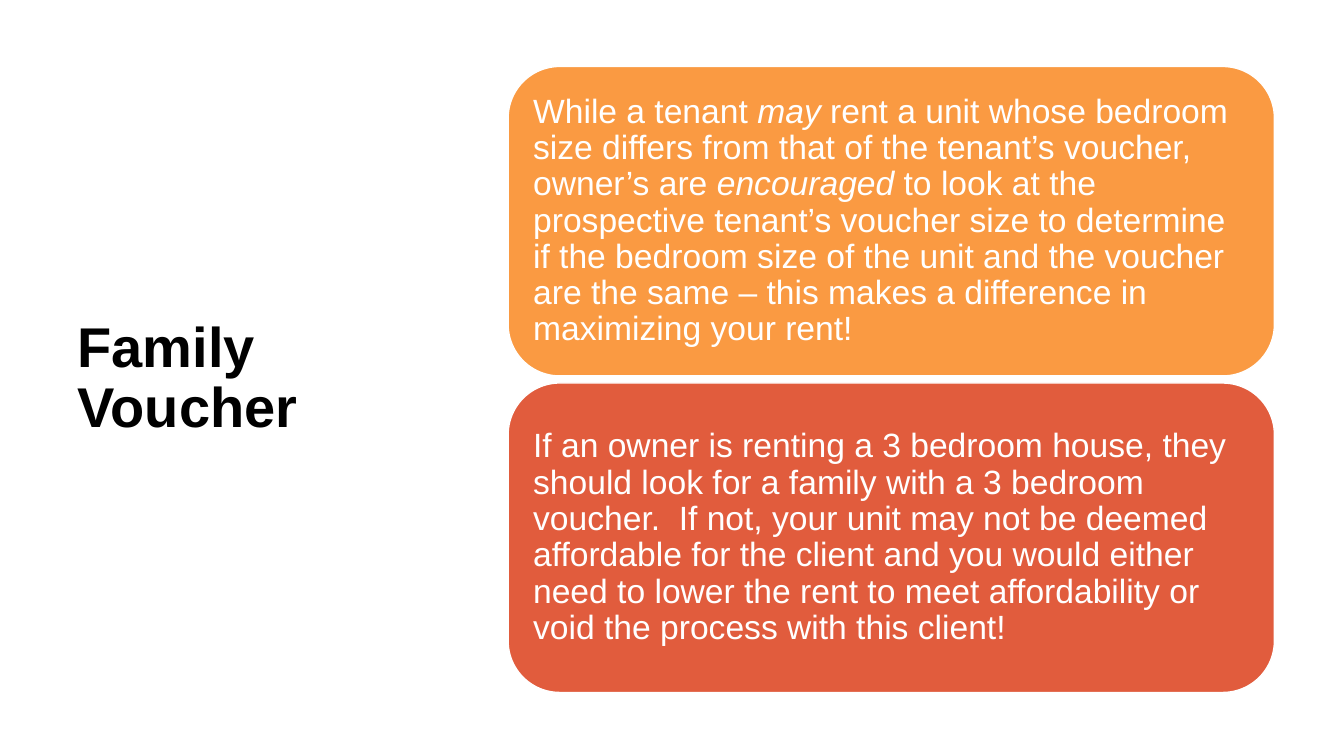
import pptx
import pptx.dml.color
import pptx.enum.shapes
import pptx.enum.text
import pptx.util

Inches = pptx.util.Inches
COLORS = {"black": "000000", "white": "FFFFFF", "orange": "FA9A42", "red": "E15C3D"}
CARDS = [
    ("orange", [
        ("While a tenant ", False),
        ("may", True),
        (" rent a unit whose bedroom size differs from that of the tenant’s voucher, owner’s are ", False),
        ("encouraged", True),
        (" to look at the prospective tenant’s voucher size to determine if the bedroom size "
         "of the unit and the voucher are the same – this makes a difference in maximizing "
         "your rent!", False),
    ]),
    ("red", [
        ("If an owner is renting a 3 bedroom house, they should look for a family with a "
         "3 bedroom voucher.  If not, your unit may not be deemed affordable for the client "
         "and you would either need to lower the rent to meet affordability or void the "
         "process with this client!", False),
    ]),
]


def color(name):
    """Return the named colour."""
    return pptx.dml.color.RGBColor.from_string(COLORS[name])


def write(frame, parts, size, ink, bold=False, inset=(0.1, 0.1)):
    """Fill a text frame with one paragraph of (text, italic) parts."""
    frame.word_wrap = True
    frame.auto_size = pptx.enum.text.MSO_AUTO_SIZE.NONE
    frame.vertical_anchor = pptx.enum.text.MSO_ANCHOR.MIDDLE
    frame.margin_left = frame.margin_right = Inches(inset[0])
    frame.margin_top = frame.margin_bottom = Inches(inset[1])
    para = frame.paragraphs[0]
    para.alignment = pptx.enum.text.PP_ALIGN.LEFT
    para.line_spacing = 0.9
    for text, italic in parts:
        run = para.add_run()
        run.text = text
        font = run.font
        font.name = "Arial"
        font.size = pptx.util.Pt(size)
        font.bold = bold
        font.italic = italic
        font.color.rgb = color(ink)


def head(slide, text):
    """Place and format the slide title."""
    title = slide.shapes.title
    title.left, title.top = Inches(0.67), Inches(0.6)
    title.width, title.height = Inches(3.82), Inches(6.33)
    write(title.text_frame, [(text, False)], 40, "black", bold=True, inset=(0.1, 0.05))


def card(slide, top, fill, parts):
    """Draw a rounded card with its text."""
    kind = pptx.enum.shapes.MSO_SHAPE.ROUNDED_RECTANGLE
    box = slide.shapes.add_shape(kind, Inches(5.04), Inches(top), Inches(7.6), Inches(3.07))
    box.shadow.inherit = False
    box.fill.solid()
    box.fill.fore_color.rgb = color(fill)
    box.line.color.rgb = color("white")
    box.line.width = pptx.util.Pt(1)
    write(box.text_frame, parts, 24, "white")


def main():
    """Build and save the slide."""
    deck = pptx.Presentation()
    deck.slide_width, deck.slide_height = Inches(13.33), Inches(7.5)
    slide = deck.slides.add_slide(deck.slide_layouts[5])
    head(slide, "Family Voucher")
    for row, (fill, parts) in enumerate(CARDS):
        card(slide, 0.66 + row * 3.14, fill, parts)
    deck.save("out.pptx")


if __name__ == "__main__":
    main()
